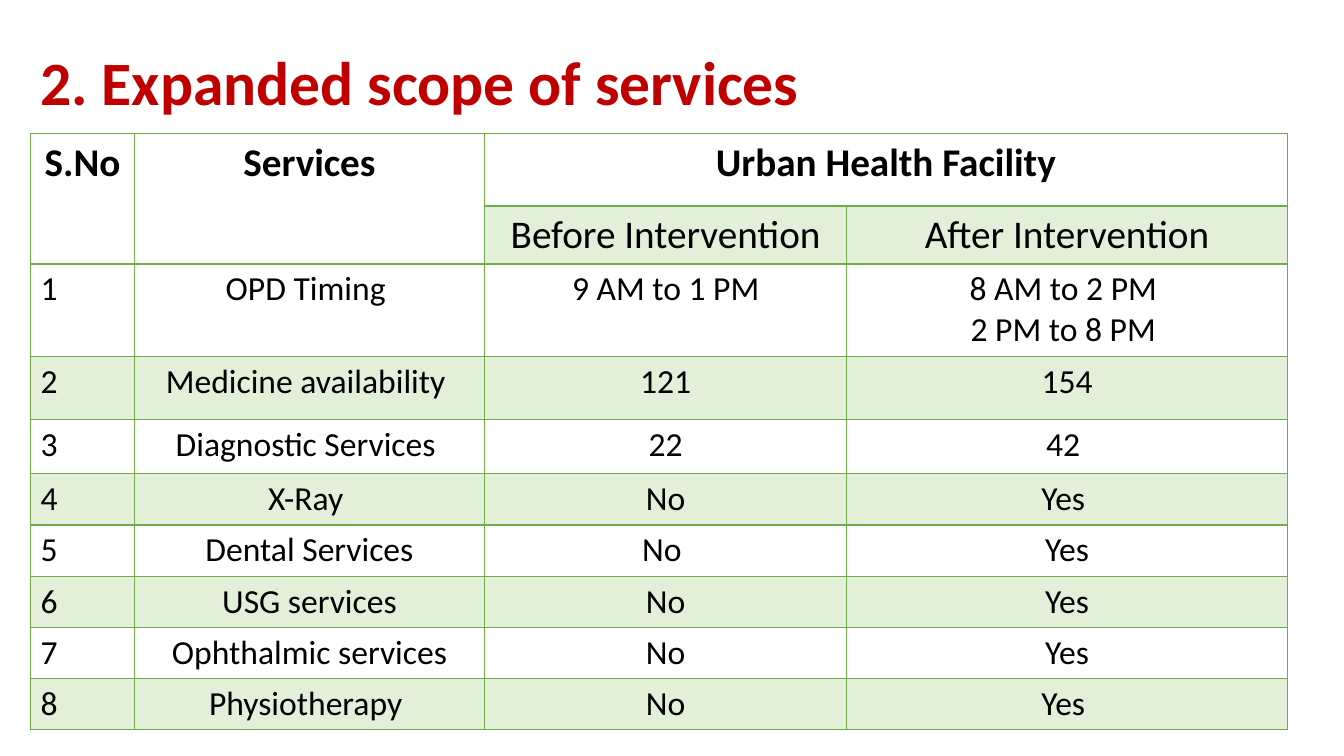
from pptx import Presentation
from pptx.util import Cm, Pt
from pptx.dml.color import RGBColor as Rgb
from pptx.enum.text import PP_ALIGN as Align, MSO_ANCHOR as Anchor
from lxml.etree import SubElement as Sub
from pptx.oxml.ns import qn

COLORS = {"title": "C00000", "text": "000000", "line": "70AD47",
          "band": "E2F0DA", "plain": "FFFFFF"}


def style(frame, size, color, bold, align):
    for para in frame.paragraphs:
        para.alignment = align
        for run in para.runs:
            font = run.font
            font.name, font.size, font.bold = "Calibri", Pt(size), bold
            font.color.rgb = Rgb.from_string(COLORS[color])


def border(cell, side, width):
    line = Sub(cell._tc.get_or_add_tcPr(), qn("a:ln" + side), w=str(Pt(width)))
    fill = Sub(line, qn("a:solidFill"))
    Sub(fill, qn("a:srgbClr"), val=COLORS["line"])


deck = Presentation()
deck.slide_width, deck.slide_height = Cm(33.87), Cm(19.05)
slide = deck.slides.add_slide(deck.slide_layouts[6])

title = slide.shapes.add_textbox(Cm(0.77), Cm(0.48), Cm(30.78), Cm(3.36)).text_frame
title.word_wrap = True
title.vertical_anchor = Anchor.MIDDLE
title.text = "2. Expanded scope of services"
title.paragraphs[0].line_spacing = 0.9
style(title, 44, "title", True, Align.LEFT)

rows = [
    ("S.No", "Services", "Urban Health Facility", ""),
    ("", "", "Before Intervention", "After Intervention"),
    ("1", "OPD Timing ", "9 AM to 1 PM", "8 AM to 2 PM \n2 PM to 8 PM "),
    ("2", "Medicine availability ", "121", "154"),
    ("3", "Diagnostic Services ", "22", "42 "),
    ("4", "X-Ray ", "No", "Yes "),
    ("5", "Dental Services", "No ", "Yes"),
    ("6", "USG services", "No", "Yes"),
    ("7", "Ophthalmic services", "No", "Yes"),
    ("8", "Physiotherapy ", "No", "Yes "),
]
widths = [2.62, 8.82, 9.13, 11.1]
heights = [1.82, 1.46, 2.33, 1.6, 1.36] + [1.29] * 5

table = slide.shapes.add_table(len(rows), len(widths), Cm(0.77), Cm(3.37),
                               Cm(sum(widths)), Cm(sum(heights))).table
for col, width in zip(table.columns, widths):
    col.width = Cm(width)
for row, height in zip(table.rows, heights):
    row.height = Cm(height)

for r, row in enumerate(rows):
    for c, text in enumerate(row):
        cell = table.cell(r, c)
        head = 1 if c < 2 else 0
        border(cell, "L", 1)
        border(cell, "R", 1)
        border(cell, "T", 2 if r == head + 1 else 1)
        border(cell, "B", 2 if r <= head else 1)
        band = r % 2 == 1 and r > head
        cell.fill.solid()
        cell.fill.fore_color.rgb = Rgb.from_string(COLORS["band" if band else "plain"])
        cell.text_frame.text = text
        style(cell.text_frame, 28 if r < 2 else 24, "text", r == 0,
              Align.LEFT if c == 0 and r > 1 else Align.CENTER)

for c in range(2):
    table.cell(0, c).merge(table.cell(1, c))
table.cell(0, 2).merge(table.cell(0, 3))

deck.save("out.pptx")
